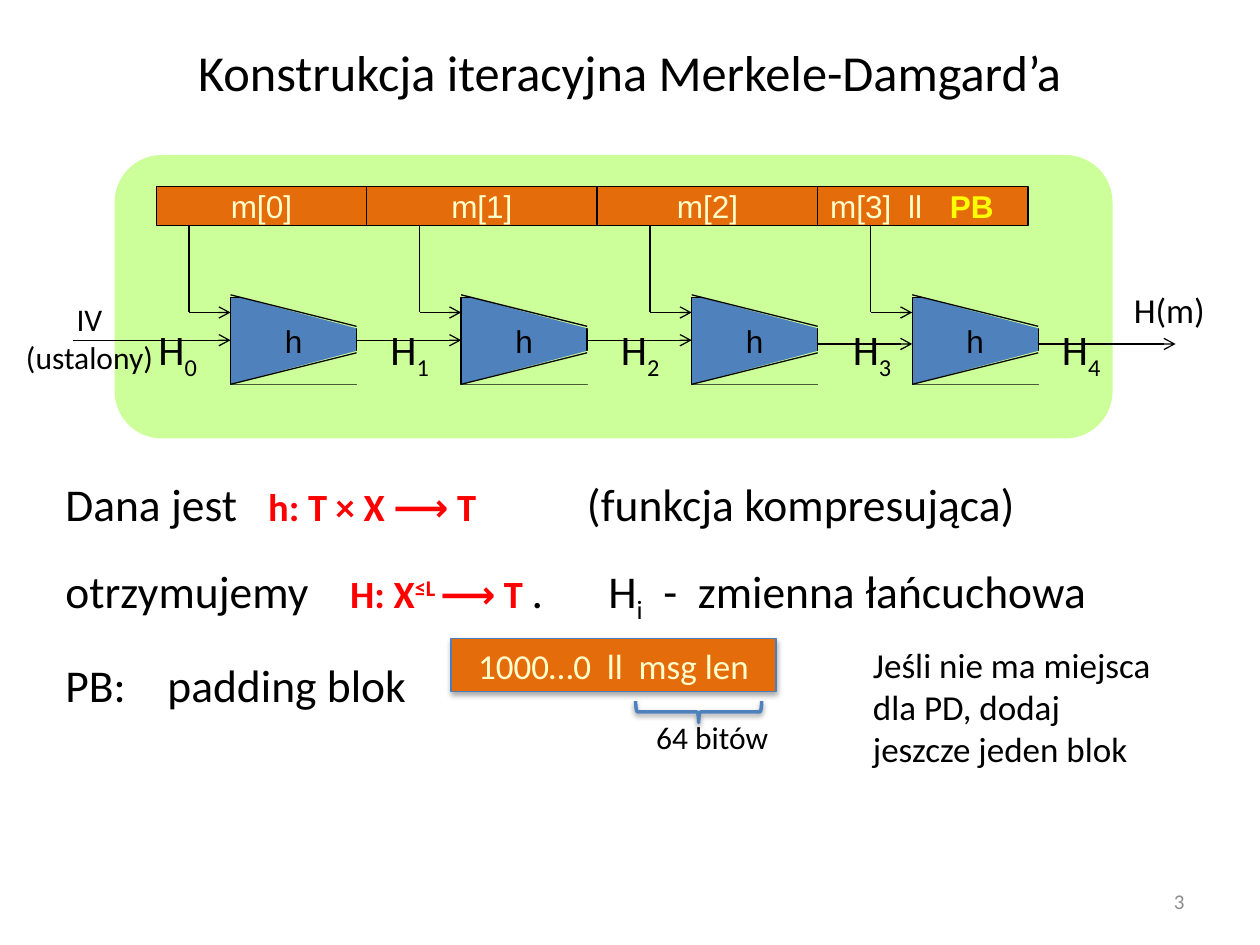
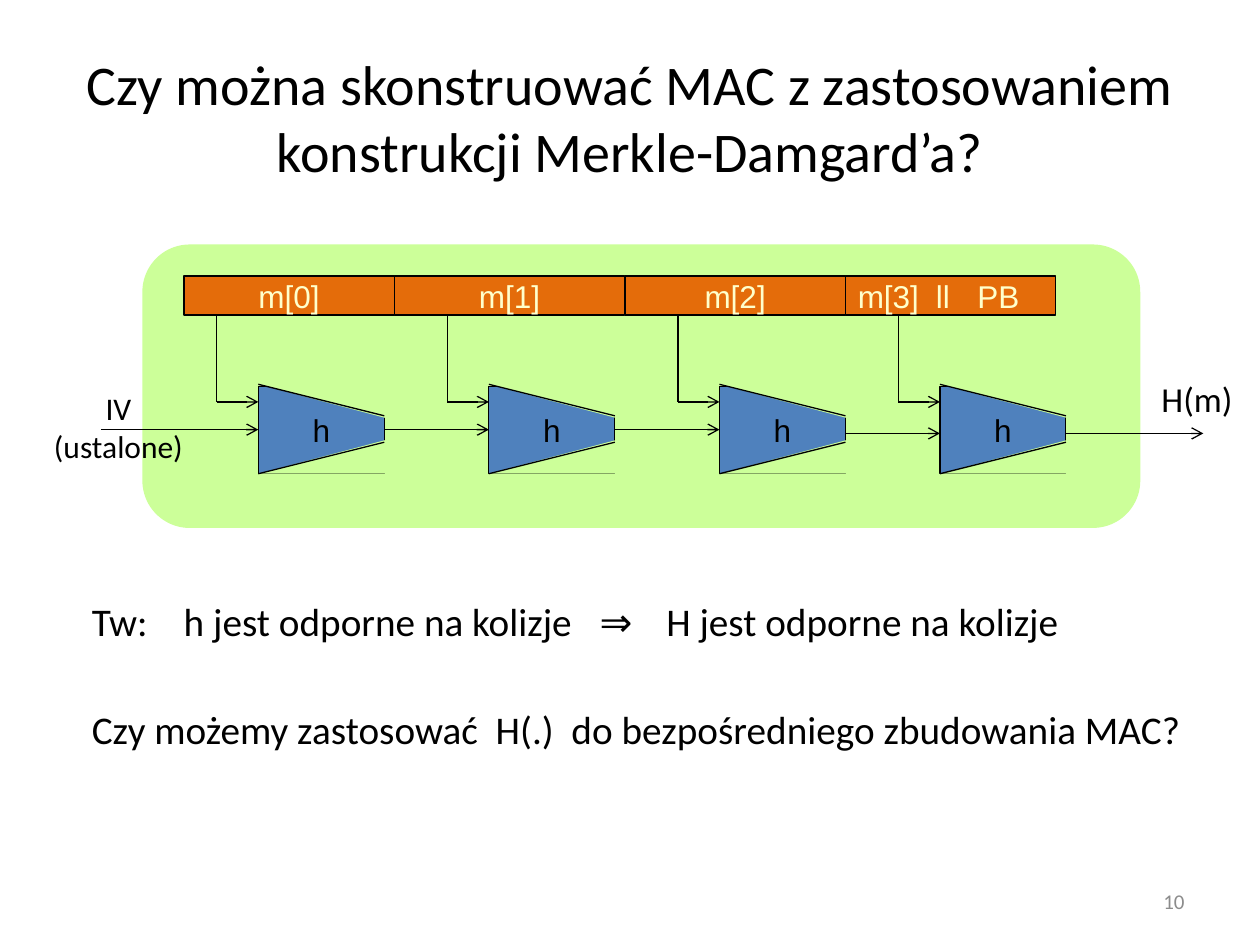
from dataclasses import dataclass

from lxml import etree
from pptx import Presentation
from pptx import util as u
from pptx.dml.color import RGBColor
from pptx.enum import shapes, text
from pptx.oxml import ns

Inches, Pt = u.Inches, u.Pt
MSO, ALIGN, ANCHOR = shapes.MSO_SHAPE, text.PP_ALIGN, text.MSO_ANCHOR


@dataclass(frozen=True)
class Theme:
    body: str = "Calibri"
    diagram: str = "Arial"
    black: str = "000000"
    gray: str = "8C8C8C"
    red: str = "FF0000"
    yellow: str = "FFFF00"
    cream: str = "FFFFCC"
    green: str = "CCFF99"
    blue: str = "4F81BD"
    blue_edge: str = "4B7EBC"
    orange: str = "E46C0A"
    number: float = 12
    label: float = 18
    note: float = 20
    formula: float = 22
    theorem: float = 22.4
    state: float = 24
    lead: float = 26
    thin: float = 0.75
    thick: float = 2


T = Theme()
STAGES = [1.83, 3.66, 5.49, 7.24]
STAGE_W = 1
BLOCK_EDGES = [1.24, 2.91, 4.74, 6.49, 8.16]
FLOW_Y = [2.7, 2.7, 2.7, 2.73, 2.73]


def child(parent, tag, **attrs):
    return etree.SubElement(parent, ns.qn(tag), {k: str(v) for k, v in attrs.items()})


def rgb(code):
    return RGBColor.from_string(code)


def write(tf, paras, size=T.label, font=T.body, color=T.black, align=ALIGN.LEFT,
          anchor=ANCHOR.TOP, wrap=False, before=0, tabs=()):
    tf.word_wrap, tf.vertical_anchor = wrap, anchor
    paras = [paras] if isinstance(paras, str) else paras
    for i, runs in enumerate(paras):
        p = tf.add_paragraph() if i else tf.paragraphs[0]
        p.alignment = align
        p.space_before = Pt(before if i else 0)
        if tabs and tabs[i]:
            stops = child(p._p.get_or_add_pPr(), "a:tabLst")
            for x in tabs[i]:
                child(stops, "a:tab", pos=Inches(x), algn="l")
        for run in [runs] if isinstance(runs, str) else runs:
            words, style = (run, {}) if isinstance(run, str) else run
            if words == "\n":
                p.add_line_break()
                continue
            r = p.add_run()
            r.text = words
            f = r.font
            f.name, f.size = font, Pt(style.get("size", size))
            f.color.rgb = rgb(style.get("color", color))
            f.bold = style.get("bold", False)
            if "shift" in style:
                r._r.get_or_add_rPr().set("baseline", str(style["shift"] * 1000))


def label(s, x, y, w, h, paras, **fmt):
    sp = s.shapes.add_textbox(Inches(x), Inches(y), Inches(w), Inches(h))
    write(sp.text_frame, paras, **fmt)


def shape(s, kind, x, y, w, h, fill=None, line=None, width=T.thin, flip=""):
    sp = s.shapes.add_shape(kind, Inches(x), Inches(y), Inches(w), Inches(h))
    sp.shadow.inherit = False
    if fill:
        sp.fill.solid()
        sp.fill.fore_color.rgb = rgb(fill)
    else:
        sp.fill.background()
    if line:
        sp.line.color.rgb = rgb(line)
        sp.line.width = Pt(width)
    else:
        sp.line.fill.background()
    for axis in flip:
        sp._element.spPr.find(ns.qn("a:xfrm")).set("flip" + axis, "1")
    return sp


def box(s, x, y, w, h, paras, fill, line=T.black, **fmt):
    sp = shape(s, MSO.RECTANGLE, x, y, w, h, fill, line)
    fmt = {"align": ALIGN.CENTER, "anchor": ANCHOR.MIDDLE, **fmt}
    write(sp.text_frame, paras, **fmt)
    return sp


def line(s, x1, y1, x2, y2, arrow=False):
    c = s.shapes.add_connector(shapes.MSO_CONNECTOR.STRAIGHT,
                               Inches(x1), Inches(y1), Inches(x2), Inches(y2))
    c.line.color.rgb = rgb(T.black)
    c.line.width = Pt(T.thin)
    if arrow:
        child(c.line._get_or_add_ln(), "a:tailEnd", type="arrow")
    child(c._element.spPr, "a:effectLst")


def drop_shadow(sp, opacity, blur, dist):
    effects = sp._element.spPr.find(ns.qn("a:effectLst"))
    shadow = child(effects, "a:outerShdw", blurRad=Pt(blur), dist=Pt(dist),
                   dir=5400000, rotWithShape=0)
    color = child(shadow, "a:srgbClr", val=T.black)
    child(color, "a:alpha", val=opacity * 1000)


def frame(prs, title, title_h, size, number):
    s = prs.slides.add_slide(prs.slide_layouts[6])
    label(s, 0.5, 0.3, 9, title_h, title, size=size, align=ALIGN.CENTER,
          anchor=ANCHOR.MIDDLE, wrap=True)
    label(s, 7.17, 6.95, 2.33, 0.4, number, size=T.number, color=T.gray,
          align=ALIGN.RIGHT, anchor=ANCHOR.MIDDLE, wrap=True)
    return s


def hash_chain(s, dx, dy, iv, iv_w, padding):
    panel = shape(s, MSO.ROUNDED_RECTANGLE, 0.91 + dx, 1.23 + dy, 7.92, 2.25, T.green)
    panel.adjustments[0] = 0.167
    stages = [x + dx for x in STAGES]
    edges = [x + dx for x in BLOCK_EDGES]

    for x in stages:
        box(s, x, 2.36 + dy, STAGE_W, 0.69, "h", T.blue, font=T.diagram)
    for i, (x, end) in enumerate(zip(edges, edges[1:])):
        last = i == len(stages) - 1
        fmt = {"align": ALIGN.LEFT, "wrap": True, "tabs": [(0.62, 0.95)]} if last else {}
        words = [[f"m[{i}]\tll\t", padding]] if last else f"m[{i}]"
        box(s, x, 1.48 + dy, end - x, 0.31, words, T.orange,
            font=T.diagram, color=T.cream, **fmt)

    starts = [0.58 + dx] + [x + STAGE_W for x in stages]
    for x, end, y in zip(starts, stages + [9.33 + dx], FLOW_Y):
        line(s, x, y + dy, end, y + dy, arrow=True)
    for x in stages:
        feed = x - 0.33
        line(s, feed, 1.79 + dy, feed, 2.48 + dy)
        line(s, feed, 2.48 + dy, x, 2.48 + dy, arrow=True)
        for top, flip, y1, y2 in ((2.34, "HV", 2.34, 2.59), (2.74, "H", 3.05, 2.8)):
            shape(s, MSO.RIGHT_TRIANGLE, x, top + dy, 1.17, 0.31, T.green, flip=flip)
            line(s, x, y1 + dy, x + STAGE_W, y2 + dy)

    label(s, 0.1 + dx, 2.33 + dy, iv_w, 0.71, ["IV", iv], align=ALIGN.CENTER)
    label(s, 8.9 + dx, 2.24 + dy, 0.77, 0.44, "H(m)", size=T.note)


def chaining_states(s):
    for i, x in enumerate([1.16, 3, 4.83, 6.67, 8.33]):
        label(s, x, 2.52, 0.53, 0.5, [["H", (str(i), {"shift": -25})]], size=T.state)


def padding_block(s):
    sp = box(s, 3.58, 5.07, 2.58, 0.42, "1000…0  ll  msg len", T.orange, T.blue_edge,
             size=T.note, color=T.cream, wrap=True)
    drop_shadow(sp, 35, 3.1, 1.8)
    brace = shape(s, MSO.RIGHT_BRACE, 5.46, 5.15, 0.17, 1, line=T.blue, width=T.thick)
    brace.rotation = 90
    drop_shadow(brace, 38, 3.1, 1.6)
    label(s, 5.11, 5.65, 1.1, 0.4, "64 bitów")


def construction_slide(prs):
    s = frame(prs, "Konstrukcja iteracyjna Merkele-Damgard’a", 0.54, 28.8, "3")
    red = {"size": T.formula, "color": T.red, "bold": True}
    label(s, 0.42, 3.73, 8.92, 2.31, [
        ["Dana jest\t", ("h: T × X ⟶ T", red), "\t(funkcja kompresująca)"],
        ["otrzymujemy\t", ("H: X", red), ("≤L ", {**red, "shift": 30}), ("⟶ T ", red),
         ".\tH", ("i", {"shift": -25}), "  -  zmienna łańcuchowa"],
        "PB:\tpadding blok",
    ], size=T.lead, wrap=True, before=18.2, tabs=[(1.61, 4.14), (2.26, 4.31), (0.81,)])
    hash_chain(s, 0, 0, "(ustalony)", 1.22, ("PB", {"color": T.yellow, "bold": True}))
    chaining_states(s)
    padding_block(s)
    label(s, 6.83, 5.06, 2.49, 1.11,
          [["Jeśli nie ma miejsca ", "\n", "dla PD, dodaj ", "\n", "jeszcze jeden blok"]],
          size=T.note)


def mac_slide(prs):
    s = frame(prs, "Czy można skonstruować MAC z zastosowaniem konstrukcji Merkle-Damgard’a?",
              1.25, 32, "10")
    label(s, 0.63, 4.69, 8.92, 1.5, [
        "Tw:\th jest odporne na kolizje\t⇒\tH jest odporne na kolizje",
        "Czy możemy zastosować  H(.)  do bezpośredniego zbudowania MAC?",
    ], size=T.theorem, wrap=True, before=35, tabs=[(0.73, 4.03, 4.56), ()])
    hash_chain(s, 0.22, 0.71, "(ustalone)", 1.24, "PB")


def main():
    prs = Presentation()
    prs.slide_width, prs.slide_height = Inches(10), Inches(7.5)
    construction_slide(prs)
    mac_slide(prs)
    prs.save("out.pptx")


if __name__ == "__main__":
    main()
